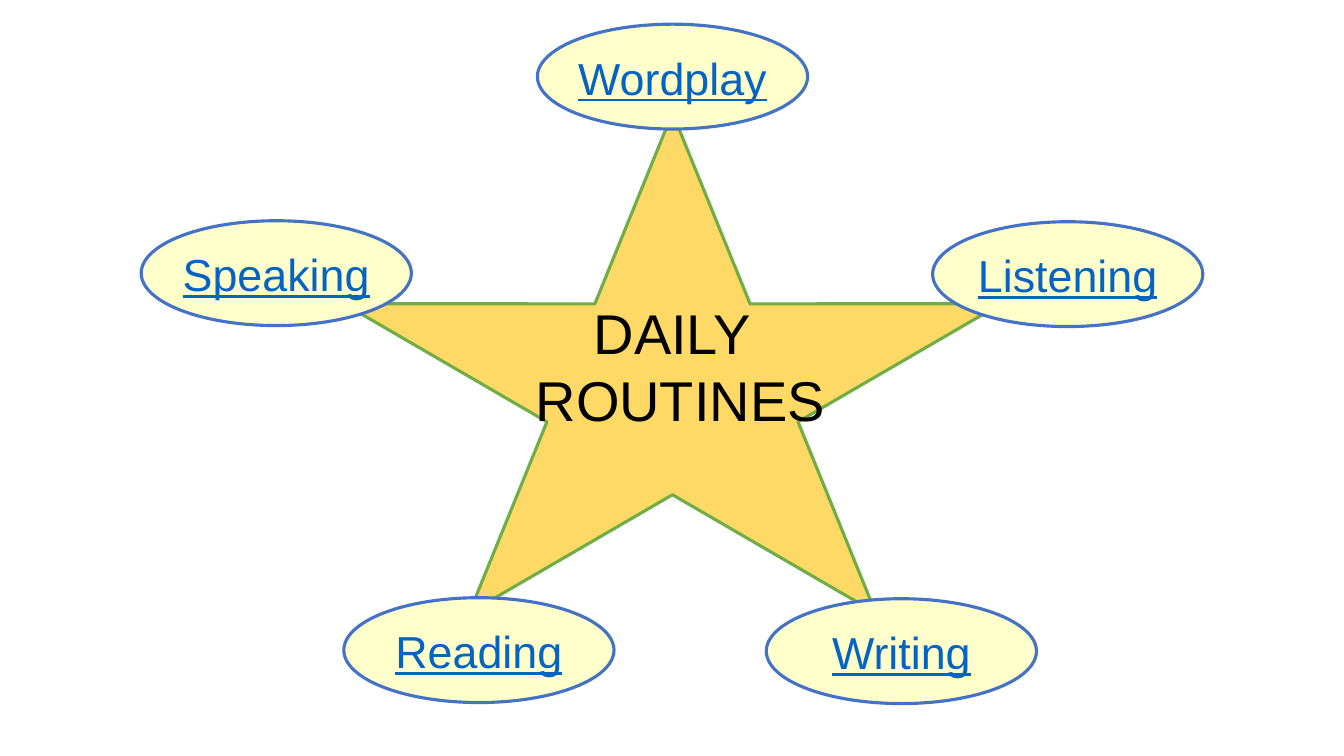
from pptx import Presentation
from pptx.dml.color import RGBColor
from pptx.enum import shapes, text
from pptx.util import Inches, Pt

COLORS = {
    "star": "FFD966",
    "star_line": "70AD47",
    "oval": "FFFFCC",
    "oval_line": "4472C4",
    "title": "000000",
    "label": "0563C1",
}
OVAL_WIDTH, OVAL_HEIGHT = 2.68, 1.04
LABEL_OFFSET, LABEL_HEIGHT = 0.21, 0.64

presentation = Presentation()
presentation.slide_width = Inches(13.33)
presentation.slide_height = Inches(7.5)
slide = presentation.slides.add_slide(presentation.slide_layouts[6])


def add_outlined(kind, box, name):
    shape = slide.shapes.add_shape(kind, *map(Inches, box))
    shape.shadow.inherit = False
    shape.fill.solid()
    shape.fill.fore_color.rgb = RGBColor.from_string(COLORS[name])
    shape.line.color.rgb = RGBColor.from_string(COLORS[name + "_line"])
    shape.line.width = Pt(2.25)


def add_centred_text(lines, box, size, color, underline=False):
    frame = slide.shapes.add_textbox(*map(Inches, box)).text_frame
    frame.word_wrap = True
    frame.auto_size = text.MSO_AUTO_SIZE.SHAPE_TO_FIT_TEXT
    frame.text = "\n".join(lines)
    for paragraph in frame.paragraphs:
        paragraph.alignment = text.PP_ALIGN.CENTER
        paragraph.font.name = "Arial"
        paragraph.font.size = Pt(size)
        paragraph.font.underline = underline
        paragraph.font.color.rgb = RGBColor.from_string(COLORS[color])


add_outlined(shapes.MSO_SHAPE.STAR_5_POINT, (3.41, 1.12, 6.52, 4.96), "star")
add_centred_text(["DAILY", " ROUTINES"], (4.76, 2.91, 3.82, 1.45), 40, "title")

activities = [
    ("Speaking", 1.4, 2.19),
    ("Wordplay", 5.33, 0.24),
    ("Reading", 3.41, 5.93),
    ("Writing", 7.6, 5.94),
    ("Listening", 9.25, 2.2),
]
for activity, left, top in activities:
    add_outlined(shapes.MSO_SHAPE.OVAL, (left, top, OVAL_WIDTH, OVAL_HEIGHT), "oval")
    label_box = (left, top + LABEL_OFFSET, OVAL_WIDTH, LABEL_HEIGHT)
    add_centred_text([activity], label_box, 32, "label", underline=True)

presentation.save("out.pptx")
